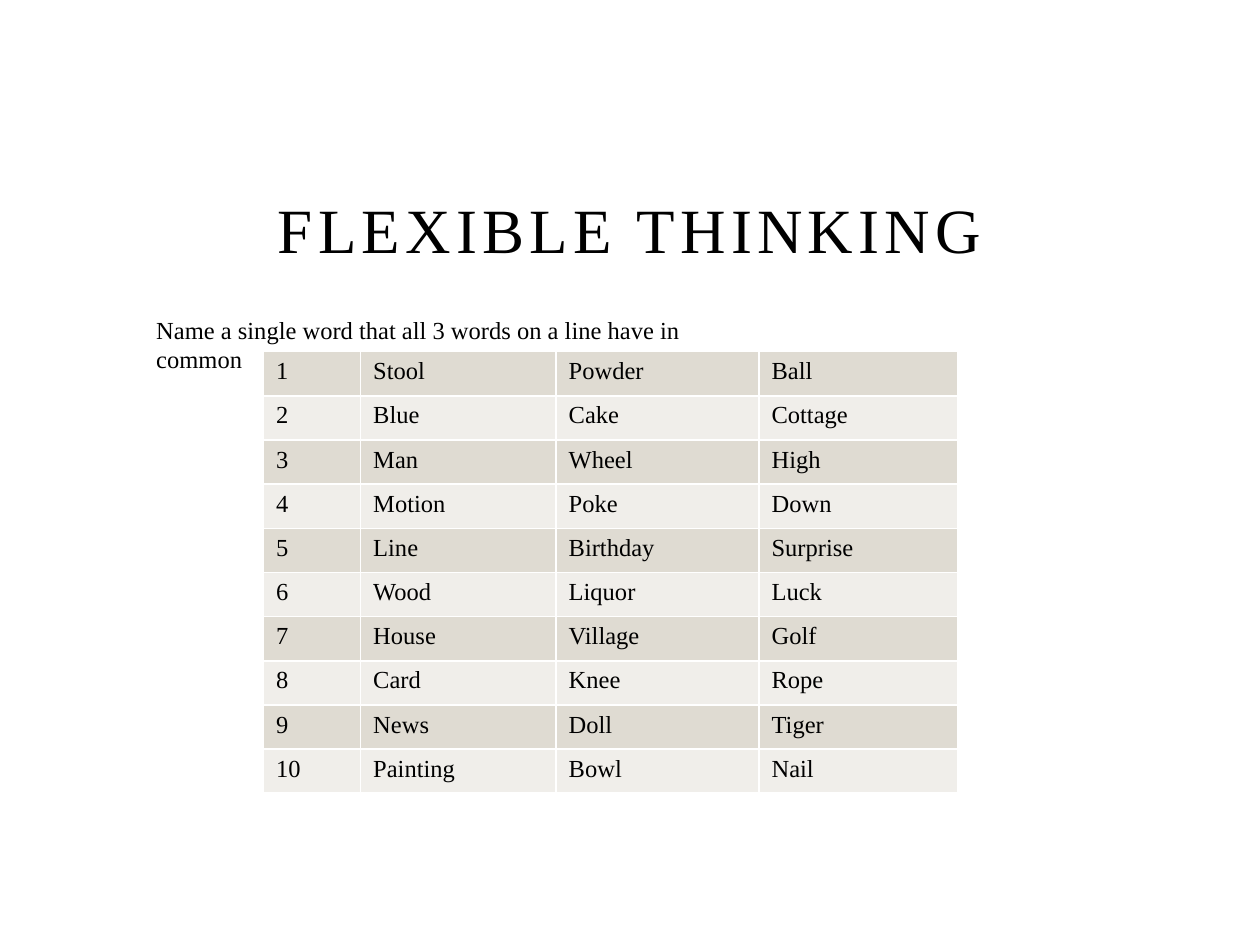
from lxml.etree import SubElement
from pptx import Presentation
from pptx.dml.color import RGBColor
from pptx.enum.text import MSO_ANCHOR as Anchor, MSO_AUTO_SIZE as AutoSize, PP_ALIGN as Align
from pptx.oxml.ns import qn
from pptx.util import Cm, Pt

WORD_LINES = [
    ("Stool", "Powder", "Ball"),
    ("Blue", "Cake", "Cottage"),
    ("Man", "Wheel", "High"),
    ("Motion", "Poke", "Down"),
    ("Line", "Birthday", "Surprise"),
    ("Wood", "Liquor", "Luck"),
    ("House", "Village", "Golf"),
    ("Card", "Knee", "Rope"),
    ("News", "Doll", "Tiger"),
    ("Painting", "Bowl", "Nail"),
]


def color(hex_code):
    return RGBColor.from_string(hex_code)


class PuzzleSlide:
    ink = "000000"
    bands = ("DFDBD2", "F0EEEA")
    rule = "FFFFFF"
    body_font = {"name": "Times New Roman", "size": Pt(14), "bold": False}
    title_font = {**body_font, "size": Pt(36)}

    def __init__(self, slide):
        self.slide = slide

    def style(self, font, values):
        for name, value in values.items():
            setattr(font, name, value)
        font.color.rgb = color(self.ink)

    def add_text(self, frame, text, values):
        paragraph = frame.paragraphs[0]
        run = paragraph.add_run()
        run.text = text
        self.style(run.font, values)
        return paragraph

    def title(self, text, left, top, width, height, spacing):
        heading = self.slide.shapes.title
        place = {"left": left, "top": top, "width": width, "height": height}
        for side, length in place.items():
            setattr(heading, side, Cm(length))
        frame = heading.text_frame
        frame.auto_size = AutoSize.NONE
        frame.vertical_anchor = Anchor.BOTTOM
        paragraph = self.add_text(frame, text, self.title_font)
        paragraph.alignment = Align.CENTER
        # Letter spacing, in hundredths of a point
        paragraph.runs[0].font._element.set("spc", str(spacing * 100))

    def instruction(self, text, left, top, width, height):
        box = self.slide.shapes.add_textbox(Cm(left), Cm(top), Cm(width), Cm(height))
        box.text_frame.word_wrap = True
        self.add_text(box.text_frame, text, self.body_font)

    def cell_borders(self, cell):
        properties = cell._tc.get_or_add_tcPr()
        for side in ("lnL", "lnR", "lnT", "lnB"):
            line = SubElement(properties, qn(f"a:{side}"), w=str(Pt(1)))
            fill = SubElement(line, qn("a:solidFill"))
            SubElement(fill, qn("a:srgbClr"), val=self.rule)

    def word_table(self, rows, left, top, widths, row_height):
        table = self.slide.shapes.add_table(
            len(rows), len(widths), Cm(left), Cm(top),
            Cm(sum(widths)), Cm(row_height * len(rows))).table
        table.first_row = False
        for column, width in zip(table.columns, widths):
            column.width = Cm(width)
        for r, words in enumerate(rows):
            table.rows[r].height = Cm(row_height)
            for c, word in enumerate(words):
                cell = table.cell(r, c)
                self.cell_borders(cell)
                cell.fill.solid()
                cell.fill.fore_color.rgb = color(self.bands[r % 2])
                self.add_text(cell.text_frame, word, self.body_font)


def main():
    deck = Presentation()
    deck.slide_width, deck.slide_height = Cm(25.4), Cm(19.05)
    title_only = deck.slide_layouts[5]
    puzzle = PuzzleSlide(deck.slides.add_slide(title_only))

    # Heading
    puzzle.title("FLEXIBLE THINKING", 3.81, 3.6, 17.78, 1.9, spacing=3)

    # Numbered word lines
    numbered = [(str(n), *words) for n, words in enumerate(WORD_LINES, 1)]
    puzzle.word_table(numbered, 5.31, 7.09, (1.96, 3.94, 4.09, 4.01), 0.89)

    # Task
    puzzle.instruction("Name a single word that all 3 words on a line have in common",
                       2.9, 6.22, 12.6, 0.86)

    deck.save("out.pptx")


if __name__ == "__main__":
    main()
